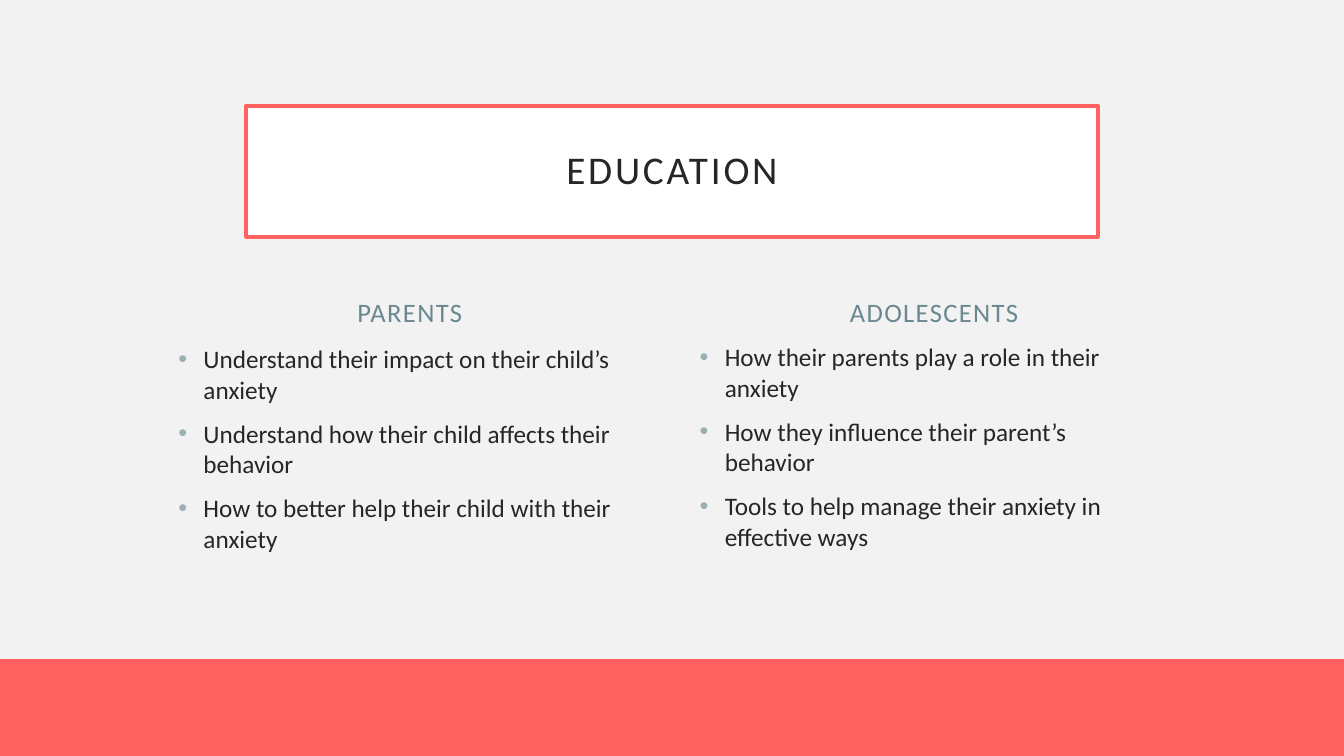
from dataclasses import dataclass

from lxml import etree
from pptx import Presentation
from pptx import util as u
from pptx.dml.color import RGBColor
from pptx.enum import shapes, text
from pptx.oxml import ns


@dataclass(frozen=True)
class Theme:
    """Colours, typeface and type sizes of the deck."""
    paper: str = "F2F2F2"
    white: str = "FFFFFF"
    coral: str = "FF6261"
    ink: str = "262626"
    heading: str = "6B8891"
    bullet: str = "9BAFB5"
    font: str = "Calibri"
    title_size: int = 28
    heading_size: int = 19
    body_size: int = 18


THEME = Theme()
COLUMNS = [
    ("PARENTS", (1.73, 2.53, 4.67, 0.77), (1.67, 3.36, 4.67, 2.84),
     ["Understand their impact on their child’s anxiety",
      "Understand how their child affects their behavior",
      "How to better help their child with their anxiety"]),
    ("ADOLESCENTS", (6.93, 2.53, 4.67, 0.77), (6.84, 3.34, 4.65, 2.84),
     ["How their parents play a role in their anxiety",
      "How they influence their parent’s behavior",
      "Tools to help manage their anxiety in effective ways"]),
]


def paint(fill, colour):
    """Make a fill solid in the given colour."""
    fill.solid()
    fill.fore_color.rgb = RGBColor.from_string(colour)


def style_runs(para, size, colour, tracking=0):
    """Set the font of every run, with letter spacing in points."""
    for span in para.runs:
        span.font.name = THEME.font
        span.font.size = u.Pt(size)
        span.font.color.rgb = RGBColor.from_string(colour)
        if tracking:
            span.font._element.set("spc", str(tracking * 100))


def add_bullet(para):
    """Give a paragraph a hanging round bullet."""
    props = para._p.get_or_add_pPr()
    props.set("marL", str(u.Inches(0.25)))
    props.set("indent", str(-u.Inches(0.25)))
    colour = etree.SubElement(props, ns.qn("a:buClr"))
    etree.SubElement(colour, ns.qn("a:srgbClr"), val=THEME.bullet)
    etree.SubElement(props, ns.qn("a:buFont"), typeface="Arial")
    etree.SubElement(props, ns.qn("a:buChar"), char="•")


def add_text(page, box, lines, anchor):
    """Add a wrapping text box and return its paragraphs."""
    frame = page.shapes.add_textbox(*map(u.Inches, box)).text_frame
    frame.word_wrap = True
    frame.vertical_anchor = anchor
    frame.text = "\n".join(lines)
    for para in frame.paragraphs:
        para.space_before = u.Pt(10)
    return frame.paragraphs


def add_column(page, heading, heading_box, body_box, points):
    """Place a centred heading and its bulleted list."""
    for para in add_text(page, heading_box, [heading], text.MSO_ANCHOR.BOTTOM):
        para.alignment = text.PP_ALIGN.CENTER
        style_runs(para, THEME.heading_size, THEME.heading, 1)
    for para in add_text(page, body_box, points, text.MSO_ANCHOR.TOP):
        add_bullet(para)
        style_runs(para, THEME.body_size, THEME.ink)


def format_title(page, box, wording):
    """Turn the title placeholder into a framed white panel."""
    title = page.shapes.title
    title.left, title.top, title.width, title.height = map(u.Inches, box)
    paint(title.fill, THEME.white)
    paint(title.line.fill, THEME.coral)
    title.line.width = u.Pt(2.5)
    frame = title.text_frame
    frame.text = wording
    frame.word_wrap = True
    frame.auto_size = text.MSO_AUTO_SIZE.NONE
    frame.vertical_anchor = text.MSO_ANCHOR.MIDDLE
    frame.margin_left = frame.margin_right = u.Inches(0.2)
    frame.margin_top = frame.margin_bottom = u.Inches(0.2)
    para = frame.paragraphs[0]
    para.alignment = text.PP_ALIGN.CENTER
    para.line_spacing = 0.9
    style_runs(para, THEME.title_size, THEME.ink, 2)


def add_footer_band(page, box):
    """Draw the plain coral band along the bottom."""
    band = page.shapes.add_shape(shapes.MSO_SHAPE.RECTANGLE, *map(u.Inches, box))
    band.shadow.inherit = False
    paint(band.fill, THEME.coral)
    band.line.fill.background()


def main():
    """Build the slide and save the deck."""
    deck = Presentation()
    deck.slide_width, deck.slide_height = u.Inches(13.33), u.Inches(7.5)
    page = deck.slides.add_slide(deck.slide_layouts.get_by_name("Title Only"))
    paint(page.background.fill, THEME.paper)
    format_title(page, (2.44, 1.05, 8.45, 1.3), "EDUCATION")
    for column in COLUMNS:
        add_column(page, *column)
    add_footer_band(page, (0, 6.54, 13.33, 0.96))
    deck.save("out.pptx")


if __name__ == "__main__":
    main()
